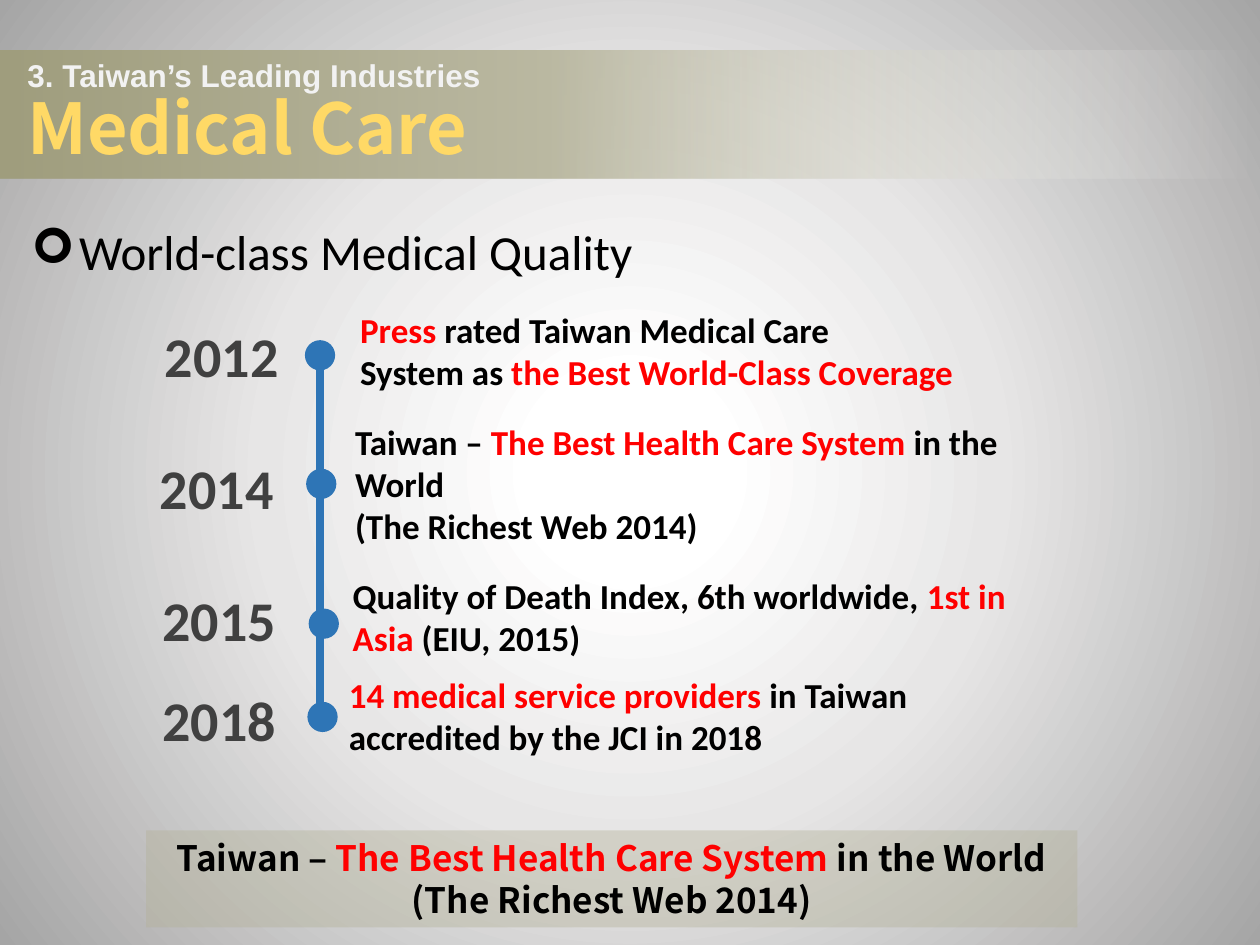
from lxml import etree
from pptx import Presentation
from pptx.dml.color import RGBColor
from pptx.enum.shapes import MSO_CONNECTOR, MSO_SHAPE
from pptx.enum.text import MSO_ANCHOR, MSO_AUTO_SIZE, PP_ALIGN
from pptx.oxml.ns import qn
from pptx.util import Inches, Pt

THEME = {
    "black": "000000", "red": "FF0000", "year": "404040", "blue": "2E75B6",
    "kicker": "F2F2F2", "title": "FFD966", "footer": "B3B197",
    "background": [(12, "FFFFFF", 100), (47, "E7E6E6", 100), (100, "A5A5A5", 100)],
    "banner": [(1, "9F9D7D", 100), (41, "BAB8A1", 100), (72, "DBDACF", 37), (94, "FFFFFF", 0)],
    "body_font": "Calibri", "kicker_font": "Arial", "title_font": "Noto Sans CJK SC",
    "body_size": 20, "year_size": 32, "heading_size": 28, "kicker_size": 18, "title_size": 40,
}

KICKER = "3. Taiwan’s Leading Industries"
TITLE = "Medical Care"
HEADING = "World-class Medical Quality"
BEST_SYSTEM = [
    [("Taiwan – ", "black"), ("The Best Health Care System", "red"), (" in the World", "black")],
    [("(The Richest Web 2014)", "black")],
]
EVENTS = [
    {"year": "2012", "year_at": (0.67, 2.5), "dot_at": (2.42, 2.7), "box": (2.76, 2.4, 5.44, 0.77),
     "text": [[("Press", "red"), (" rated Taiwan Medical Care", "black")],
              [("System as ", "black"), ("the Best World-Class Coverage", "red")]]},
    {"year": "2014", "year_at": (0.63, 3.55), "dot_at": (2.43, 3.72), "box": (2.72, 3.29, 5.44, 1.11),
     "text": BEST_SYSTEM},
    {"year": "2015", "year_at": (0.65, 4.6), "dot_at": (2.45, 4.83), "box": (2.7, 4.51, 5.52, 0.77),
     "text": [[("Quality of Death Index, 6th worldwide, ", "black"), ("1st in Asia ", "red"),
               ("(EIU, 2015)", "black")]]},
    {"year": "2018", "year_at": (0.65, 5.39), "dot_at": (2.44, 5.57), "box": (2.67, 5.3, 4.99, 0.77),
     "text": [[("14 medical service providers ", "red"),
               ("in Taiwan accredited by the JCI in 2018", "black")]]},
]
YEAR_SIZE = (1.64, 0.64)
DOT_SIZE = (0.24, 0.24)


def rgb(name):
    return RGBColor.from_string(THEME[name])


def set_alpha(color, percent):
    etree.SubElement(color, qn("a:alpha"), val=str(percent * 1000))


def set_gradient(fill, root, stops, circular=False):
    fill.gradient()
    grad = next(root.iter(qn("a:gradFill")))
    for child in list(grad):
        grad.remove(child)
    gs_list = etree.SubElement(grad, qn("a:gsLst"))
    for pos, color, alpha in stops:
        gs = etree.SubElement(gs_list, qn("a:gs"), pos=str(pos * 1000))
        clr = etree.SubElement(gs, qn("a:srgbClr"), val=color)
        if alpha < 100:
            set_alpha(clr, alpha)
    if circular:
        centre = etree.SubElement(grad, qn("a:path"), {"path": "circle"})
        etree.SubElement(centre, qn("a:fillToRect"), {side: "50000" for side in "ltrb"})
    else:
        etree.SubElement(grad, qn("a:lin"), ang="0", scaled="0")


def add_run(p, text, color, font, size, bold=True):
    r = p.add_run()
    r.text = text
    formats = {"name": THEME[font], "size": Pt(THEME[size]), "bold": bold}
    for name, value in formats.items():
        setattr(r.font, name, value)
    r.font.color.rgb = rgb(color)


def setup_frame(tf, anchor=MSO_ANCHOR.TOP, auto_size=MSO_AUTO_SIZE.NONE):
    formats = {"word_wrap": True, "vertical_anchor": anchor, "auto_size": auto_size}
    for name, value in formats.items():
        setattr(tf, name, value)
    return tf


def add_text(s, box, **formats):
    return setup_frame(s.shapes.add_textbox(*map(Inches, box)).text_frame, **formats)


def write(tf, lines, font="body_font", size="body_size", align=PP_ALIGN.LEFT):
    for i, line in enumerate(lines):
        p = tf.add_paragraph() if i else tf.paragraphs[0]
        p.alignment = align
        for text, color in line:
            add_run(p, text, color, font, size)


def add_plain_shape(s, kind, box):
    sp = s.shapes.add_shape(kind, *map(Inches, box))
    sp.shadow.inherit = False
    sp.line.fill.background()
    return sp


def add_timeline(s):
    line = s.shapes.add_connector(MSO_CONNECTOR.STRAIGHT, *map(Inches, (2.54, 2.94, 2.54, 5.61)))
    line.line.color.rgb = rgb("blue")
    line.line.width = Pt(4.5)
    etree.SubElement(line._element.spPr, qn("a:effectLst"))
    grow = MSO_AUTO_SIZE.SHAPE_TO_FIT_TEXT
    for event in EVENTS:
        dot = add_plain_shape(s, MSO_SHAPE.OVAL, event["dot_at"] + DOT_SIZE)
        dot.fill.solid()
        dot.fill.fore_color.rgb = rgb("blue")
        write(add_text(s, event["year_at"] + YEAR_SIZE, auto_size=grow),
              [[(event["year"], "year")]], size="year_size", align=PP_ALIGN.RIGHT)
        write(add_text(s, event["box"], auto_size=grow), event["text"])


def add_heading(s):
    p = add_text(s, (0.15, 1.6, 6.48, 0.79), anchor=MSO_ANCHOR.MIDDLE).paragraphs[0]
    pPr = p._p.get_or_add_pPr()
    pPr.set("marL", str(Inches(0.38)))
    pPr.set("indent", str(Inches(-0.38)))
    etree.SubElement(pPr, qn("a:buFont"), typeface="Wingdings")
    etree.SubElement(pPr, qn("a:buChar"), char="➢")
    add_run(p, HEADING, "black", "body_font", "heading_size", bold=False)


def add_footer(s):
    sp = add_plain_shape(s, MSO_SHAPE.RECTANGLE, (1.16, 6.59, 7.39, 0.77))
    sp.fill.solid()
    sp.fill.fore_color.rgb = rgb("footer")
    set_alpha(next(sp._element.spPr.iter(qn("a:srgbClr"))), 40)
    tf = setup_frame(sp.text_frame, auto_size=MSO_AUTO_SIZE.SHAPE_TO_FIT_TEXT)
    write(tf, BEST_SYSTEM, font="title_font", align=PP_ALIGN.CENTER)


def add_banner(s):
    sp = add_plain_shape(s, MSO_SHAPE.RECTANGLE, (0, 0.4, 10.56, 1.02))
    set_gradient(sp.fill, sp._element.spPr, THEME["banner"])
    p = add_text(s, (0.12, 0.4, 9.76, 1.02), anchor=MSO_ANCHOR.MIDDLE).paragraphs[0]
    p.line_spacing = 0.9
    add_run(p, KICKER, "kicker", "kicker_font", "kicker_size")
    p.add_line_break()
    add_run(p, TITLE, "title", "title_font", "title_size")


def main():
    prs = Presentation()
    prs.slide_width, prs.slide_height = Inches(10), Inches(7.5)
    s = prs.slides.add_slide(prs.slide_layouts[6])
    set_gradient(s.background.fill, s._element, THEME["background"], circular=True)
    add_timeline(s)
    add_heading(s)
    add_footer(s)
    add_banner(s)
    prs.save("out.pptx")


if __name__ == "__main__":
    main()
